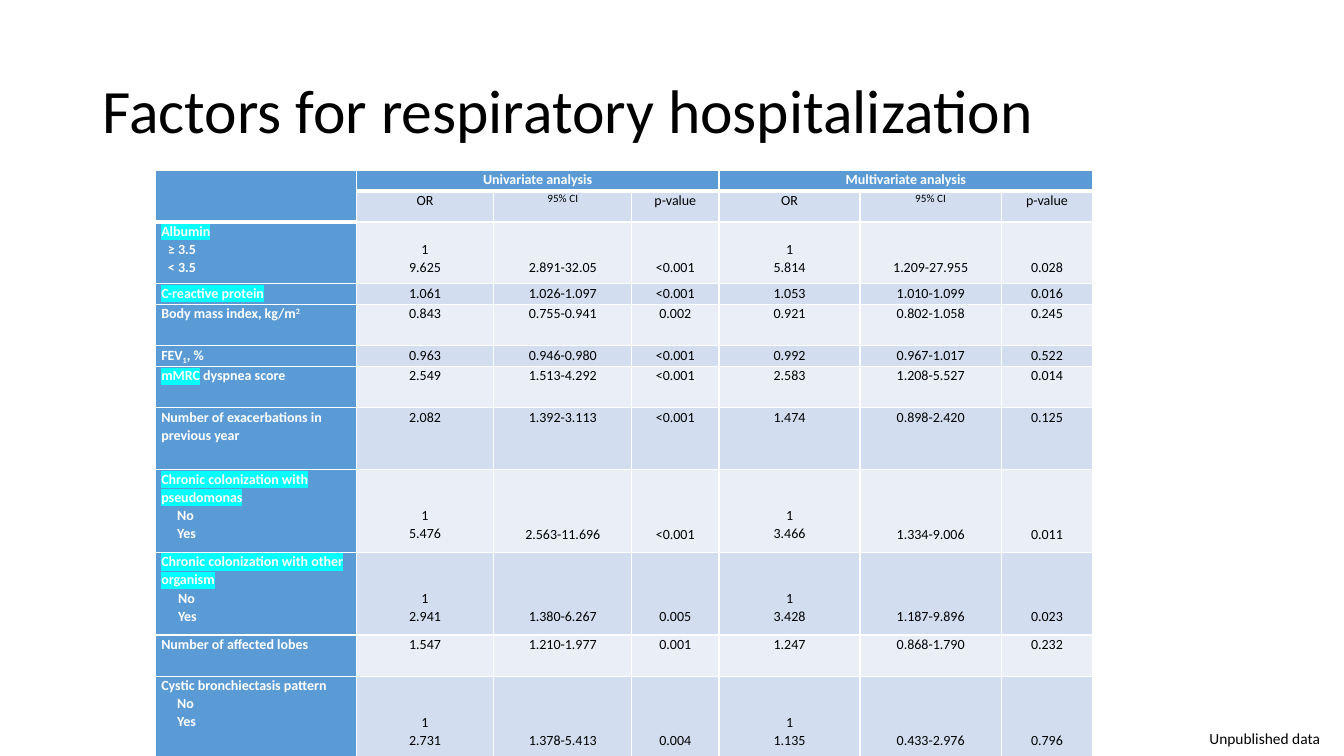
from lxml import etree
from pptx import Presentation
from pptx.dml.color import RGBColor
from pptx.enum.text import MSO_ANCHOR, PP_ALIGN
from pptx.oxml.ns import qn
from pptx.util import Inches, Pt

LEFT, MID = PP_ALIGN.LEFT, PP_ALIGN.CENTER
CENTER, TOP = MSO_ANCHOR.MIDDLE, MSO_ANCHOR.TOP

BLACK = RGBColor(0x00, 0x00, 0x00)
WHITE = RGBColor(0xFF, 0xFF, 0xFF)
BLUE = RGBColor(0x5B, 0x9B, 0xD5)
BANDS = RGBColor(0xEA, 0xEF, 0xF7), RGBColor(0xD2, 0xDE, 0xEF)
CYAN = RGBColor(0x00, 0xFF, 0xFF)
FONT = "Calibri"

# The slide is a grid of 160 columns by 90 rows
UNIT = Inches(13.33) / 160
COLS = 23.9, 16.4, 16.4, 10.4, 16.8, 16.8, 10.9
ROW = 2.46    # height of a one-line table row
LINE = 2.18   # height of a line of text in a cell
PAD = 0.7

HEADS = ["OR", "95% CI", "p-value"] * 2

# Label runs (text, style), indented levels, indent, row height in lines,
# lines above the last value, values; "1" is the reference level
DATA = [
    ([("Albumin", "mark")], ["≥ 3.5", "< 3.5"], 0.8, 3, 2,
     ["1\n9.625", "2.891-32.05", "<0.001", "1\n5.814", "1.209-27.955", "0.028"]),
    ([("C-reactive protein", "mark")], [], 0, 1, 0,
     ["1.061", "1.026-1.097", "<0.001", "1.053", "1.010-1.099", "0.016"]),
    ([("Body mass index, kg/m", ""), ("2", "sup")], [], 0, 2, 0,
     ["0.843", "0.755-0.941", "0.002", "0.921", "0.802-1.058", "0.245"]),
    ([("FEV", ""), ("1", "sub"), (", %", "")], [], 0, 1, 0,
     ["0.963", "0.946-0.980", "<0.001", "0.992", "0.967-1.017", "0.522"]),
    ([("mMRC", "mark"), (" dyspnea score", "")], [], 0, 2, 0,
     ["2.549", "1.513-4.292", "<0.001", "2.583", "1.208-5.527", "0.014"]),
    ([("Number of exacerbations in previous year", "")], [], 0, 3, 0,
     ["2.082", "1.392-3.113", "<0.001", "1.474", "0.898-2.420", "0.125"]),
    ([("Chronic colonization with pseudomonas", "mark")], ["No", "Yes"], 1.9, 4, 3,
     ["1\n5.476", "2.563-11.696", "<0.001", "1\n3.466", "1.334-9.006", "0.011"]),
    ([("Chronic colonization with other organism", "mark")], ["No", "Yes"], 2, 4, 3,
     ["1\n2.941", "1.380-6.267", "0.005", "1\n3.428", "1.187-9.896", "0.023"]),
    ([("Number of affected lobes", "")], [], 0, 2, 0,
     ["1.547", "1.210-1.977", "0.001", "1.247", "0.868-1.790", "0.232"]),
    ([("Cystic bronchiectasis pattern", "")], ["No", "Yes"], 1.9, 4, 3,
     ["1\n2.731", "1.378-5.413", "0.004", "1\n1.135", "0.433-2.976", "0.796"]),
]


def span(n):
    return int(n * UNIT)


def style(frame, size, color, bold=False, align=LEFT, gap=1.0):
    for para in frame.paragraphs:
        para.alignment = align
        para.line_spacing = gap
        for run in para.runs:
            font = run.font
            font.name, font.size, font.bold = FONT, Pt(size), bold
            font.color.rgb = color


def accent(run, kind):
    """Highlight, raise or lower a run that is already formatted."""
    props = run._r.get_or_add_rPr()
    if kind == "mark":
        mark = etree.Element(qn("a:highlight"))
        etree.SubElement(mark, qn("a:srgbClr"), val=str(CYAN))
        props.find(qn("a:latin")).addprevious(mark)
    elif kind:
        props.set("baseline", "30000" if kind == "sup" else "-25000")


def edge(cell, top, bottom):
    """White cell borders, with widths in points."""
    props = cell._tc.get_or_add_tcPr()
    sides = ("L", 1), ("R", 1), ("T", top), ("B", bottom)
    for i, (side, width) in enumerate(sides):
        line = etree.Element(qn("a:ln" + side), w=str(Pt(width)))
        fill = etree.SubElement(line, qn("a:solidFill"))
        etree.SubElement(fill, qn("a:srgbClr"), val=str(WHITE))
        props.insert(i, line)


def paint(cell, fill, skip=0):
    cell.fill.solid()
    cell.fill.fore_color.rgb = fill
    cell.margin_left = cell.margin_right = span(PAD)
    cell.margin_top, cell.margin_bottom = span(skip * LINE), 0
    cell.vertical_anchor = TOP


def value(cell, text, fill, skip=0, size=10, color=BLACK, bold=False):
    paint(cell, fill, skip)
    cell.text_frame.text = text
    style(cell.text_frame, size, color, bold, MID, 1.07)


def label(cell, runs, levels, indent):
    paint(cell, BLUE)
    frame = cell.text_frame
    for text, _ in runs:
        frame.paragraphs[0].add_run().text = text
    for text in levels:
        para = frame.add_paragraph()
        para.text = text
        props = para._p.get_or_add_pPr()
        props.set("marL", "0")
        props.set("indent", str(span(indent)))
    style(frame, 10, WHITE, True, gap=1.07)
    for run, (_, kind) in zip(frame.paragraphs[0].runs, runs):
        accent(run, kind)


def place(shape, left, top, width, height):
    shape.left, shape.top = span(left), span(top)
    shape.width, shape.height = span(width), span(height)


def add_title(slide, text):
    title = slide.shapes.title
    place(title, 11, 4.8, 138, 17.4)
    title.text_frame.text = text
    title.text_frame.vertical_anchor = CENTER
    style(title.text_frame, 44, BLACK, gap=0.9)


def add_grid(slide):
    lines = [1, 1] + [row[3] for row in DATA]
    frame = slide.shapes.add_table(
        len(lines), len(COLS), span(18.5), span(20.3),
        span(sum(COLS)), span(sum(lines) * ROW))
    table = frame.table
    table.first_row = table.horz_banding = False
    for col, width in zip(table.columns, COLS):
        col.width = span(width)
    for row, count in zip(table.rows, lines):
        row.height = span(count * ROW)

    # Header rows
    paint(table.cell(0, 0), BLUE)
    table.cell(0, 0).merge(table.cell(1, 0))
    for col, text in (1, "Univariate analysis"), (4, "Multivariate analysis"):
        table.cell(0, col).merge(table.cell(0, col + 2))
        value(table.cell(0, col), text, BLUE, color=WHITE, bold=True)
    for col, text in enumerate(HEADS, 1):
        value(table.cell(1, col), text, BANDS[1], size=8 if "CI" in text else 10)

    # Factor rows
    for r, (runs, levels, indent, _, skip, values) in enumerate(DATA, 2):
        label(table.cell(r, 0), runs, levels, indent)
        for col, text in enumerate(values, 1):
            value(table.cell(r, col), text, BANDS[r % 2], skip - text.count("\n"))

    # Borders, heavier below the blue header
    for r in range(len(lines)):
        for col in range(len(COLS)):
            last = 0 if col else 1
            edge(table.cell(r, col), 3 if r == last + 1 else 1,
                 3 if r <= last else 1)


def add_note(slide, text):
    box = slide.shapes.add_textbox(0, 0, 0, 0)
    place(box, 142.8, 86.2, 17.2, 3.5)
    box.text_frame.text = text
    style(box.text_frame, 11, BLACK)


def main():
    deck = Presentation()
    deck.slide_width, deck.slide_height = Inches(13.33), Inches(7.5)
    slide = deck.slides.add_slide(deck.slide_layouts[5])
    add_title(slide, "Factors for respiratory hospitalization")
    add_grid(slide)
    add_note(slide, "Unpublished data")
    deck.save("out.pptx")


if __name__ == "__main__":
    main()
